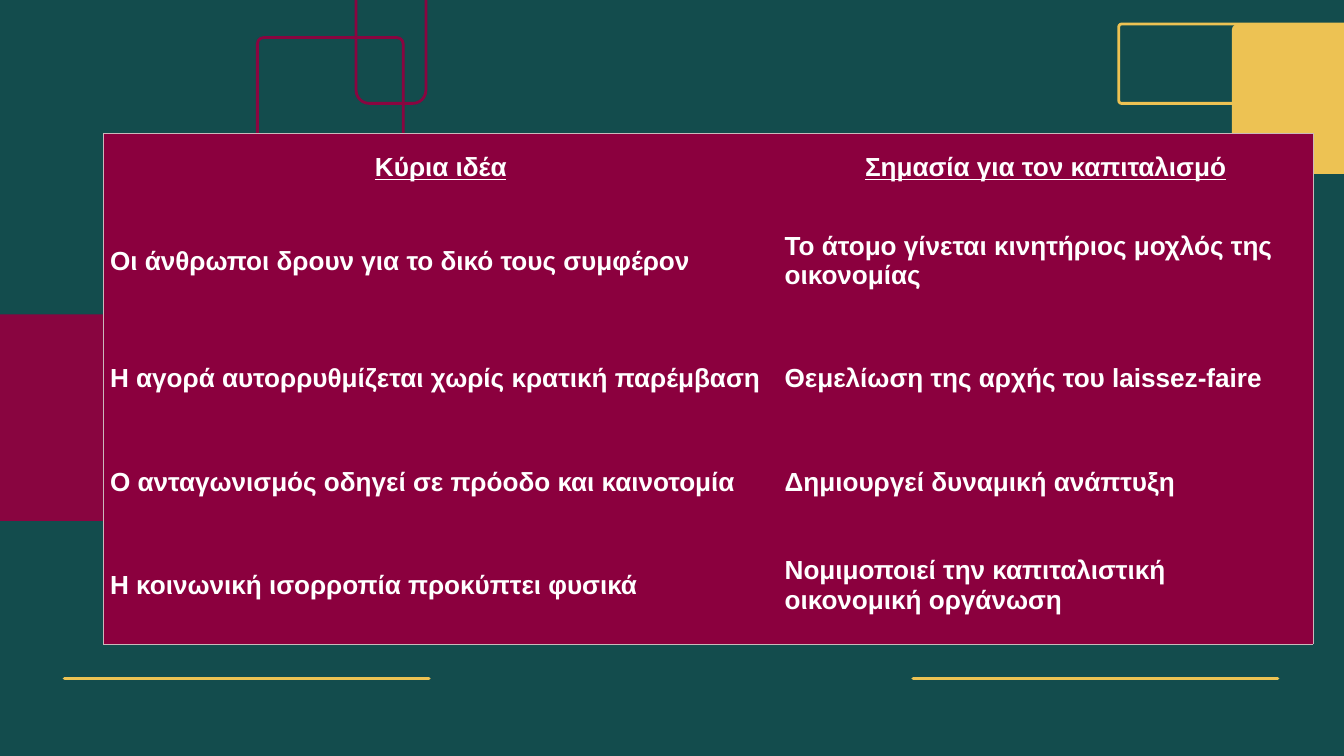
from lxml import etree
from pptx import Presentation
from pptx.dml.color import RGBColor
from pptx.enum import shapes, text
from pptx.oxml.ns import qn
from pptx.util import Cm, Pt

TEAL, GOLD, WINE = "134C4D", "EDC253", "890540"
TABLE_FILL, TABLE_EDGE, WHITE = "8B003E", "CBB8BB", "FFFFFF"

COLUMN_WIDTHS = [25.5, 20.22]
ROW_HEIGHTS = [2.62, 4.44, 4.44, 3.38, 4.44]
IDEAS = [
    ("Κύρια ιδέα", "Σημασία για τον καπιταλισμό"),
    ("Οι άνθρωποι δρουν για το δικό τους συμφέρον",
     "Το άτομο γίνεται κινητήριος μοχλός της οικονομίας"),
    ("Η αγορά αυτορρυθμίζεται χωρίς κρατική παρέμβαση",
     "Θεμελίωση της αρχής του laissez-faire"),
    ("Ο ανταγωνισμός οδηγεί σε πρόοδο και καινοτομία",
     "Δημιουργεί δυναμική ανάπτυξη"),
    ("Η κοινωνική ισορροπία προκύπτει φυσικά",
     "Νομιμοποιεί την καπιταλιστική οικονομική οργάνωση"),
]


def color(value):
    return RGBColor.from_string(value)


def add_rule(page, left, top, width):
    """Draw a horizontal gold line with round ends."""
    rule = page.shapes.add_connector(
        shapes.MSO_CONNECTOR.STRAIGHT, Cm(left), Cm(top), Cm(left + width), Cm(top))
    rule.line.color.rgb = color(GOLD)
    rule.line.width = Pt(4)
    properties = rule._element.spPr
    properties.find(qn("a:ln")).set("cap", "rnd")
    etree.SubElement(properties, qn("a:effectLst"))


def add_panel(page, left, top, width, height, radius, fill=None, line=None):
    """Draw a rounded rectangle, either filled or outlined."""
    panel = page.shapes.add_shape(
        shapes.MSO_SHAPE.ROUNDED_RECTANGLE, Cm(left), Cm(top), Cm(width), Cm(height))
    panel.adjustments[0] = radius / min(width, height)
    panel.shadow.inherit = False
    if fill:
        panel.fill.solid()
        panel.fill.fore_color.rgb = color(fill)
    else:
        panel.fill.background()
    if line:
        panel.line.color.rgb = color(line)
        panel.line.width = Pt(3)
    else:
        panel.line.fill.background()


def set_borders(cell, outer_sides):
    """Line the sides on the table's edge and clear the others."""
    properties = cell._tc.get_or_add_tcPr()
    for side in "LRTB":
        border = etree.SubElement(properties, qn(f"a:ln{side}"))
        if side in outer_sides:
            border.set("w", str(Pt(0.75)))
            fill = etree.SubElement(border, qn("a:solidFill"))
            etree.SubElement(fill, qn("a:srgbClr")).set("val", TABLE_EDGE)
        else:
            border.set("w", "0")
            etree.SubElement(border, qn("a:noFill"))


def fill_cell(cell, words, is_header):
    cell.fill.solid()
    cell.fill.fore_color.rgb = color(TABLE_FILL)
    cell.vertical_anchor = text.MSO_ANCHOR.MIDDLE
    cell.margin_left = cell.margin_right = Cm(0.25)
    cell.text_frame.text = words
    paragraph = cell.text_frame.paragraphs[0]
    paragraph.alignment = text.PP_ALIGN.CENTER if is_header else text.PP_ALIGN.LEFT
    font = paragraph.runs[0].font
    font.name = "Arial"
    font.size = Pt(28)
    font.bold = True
    font.underline = is_header
    font.color.rgb = color(WHITE)


def add_idea_table(page, left, top):
    frame = page.shapes.add_table(
        len(IDEAS), len(COLUMN_WIDTHS), Cm(left), Cm(top),
        Cm(sum(COLUMN_WIDTHS)), Cm(sum(ROW_HEIGHTS)))
    table = frame.table
    table.first_row = table.horz_banding = False
    for column, width in zip(table.columns, COLUMN_WIDTHS):
        column.width = Cm(width)
    for row, height in zip(table.rows, ROW_HEIGHTS):
        row.height = Cm(height)
    last_row, last_column = len(IDEAS) - 1, len(COLUMN_WIDTHS) - 1
    for i, idea in enumerate(IDEAS):
        for j, words in enumerate(idea):
            cell = table.cell(i, j)
            edges = {"L": j == 0, "R": j == last_column,
                     "T": i == 0, "B": i == last_row}
            set_borders(cell, [side for side, outer in edges.items() if outer])
            fill_cell(cell, words, is_header=i == 0)


def main():
    deck = Presentation()
    deck.slide_width, deck.slide_height = Cm(50.8), Cm(28.58)
    page = deck.slides.add_slide(deck.slide_layouts[6])
    page.background.fill.solid()
    page.background.fill.fore_color.rgb = color(TEAL)

    for left in (34.52, 2.44):
        add_rule(page, left, 25.65, 13.77)
    add_panel(page, -3.81, 11.89, 15.52, 7.8, 0.15, fill=WINE)
    add_panel(page, 46.56, 0.91, 6.02, 5.66, 0.23, fill=GOLD)
    add_panel(page, 42.29, 0.91, 14.55, 3, 0.1, line=GOLD)
    add_panel(page, 13.46, -0.69, 2.64, 4.6, 0.5, line=WINE)
    add_panel(page, 9.73, 1.42, 5.51, 5.18, 0.24, line=WINE)
    add_idea_table(page, 3.91, 5.03)
    deck.save("out.pptx")


if __name__ == "__main__":
    main()
